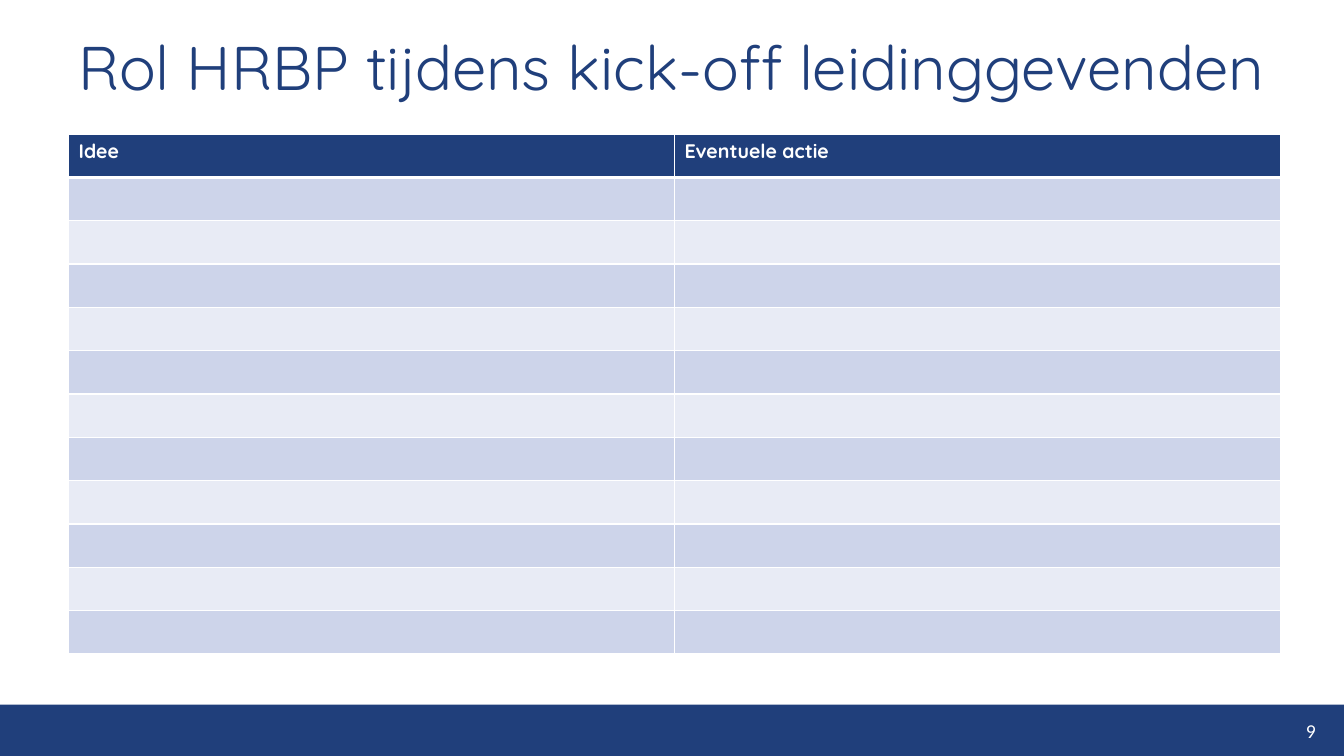
from lxml.etree import SubElement
from pptx import Presentation
from pptx.dml.color import RGBColor
from pptx.enum.shapes import MSO_SHAPE
from pptx.enum.text import MSO_ANCHOR, PP_ALIGN
from pptx.oxml.ns import qn
from pptx.util import Inches, Pt

NAVY, WHITE = "203F7B", "FFFFFF"
BANDS = ("CDD4EA", "E8EBF5")


def color(value):
    return RGBColor.from_string(value)


class SlideBuilder:
    """Holds the text style and the slide being built."""

    def __init__(self, page, font):
        self.page = page
        self.font = font

    def add_span(self, para, text, size, tint, bold=False, font=None):
        span = para.add_run()
        span.text = text
        span.font.name = font or self.font
        span.font.size = Pt(size)
        span.font.bold = bold
        span.font.color.rgb = color(tint)

    def bar(self, left, top, width, height, tint):
        box = self.page.shapes.add_shape(
            MSO_SHAPE.RECTANGLE, *map(Inches, (left, top, width, height)))
        box.shadow.inherit = False
        box.fill.solid()
        box.fill.fore_color.rgb = color(tint)
        box.line.fill.background()

    def text(self, place, text, size, tint, align, anchor=MSO_ANCHOR.TOP,
             insets=(0.1, 0.05), spacing=None, font=None):
        box = self.page.shapes.add_textbox(*map(Inches, place))
        frame = box.text_frame
        frame.word_wrap = True
        frame.vertical_anchor = anchor
        frame.margin_left = frame.margin_right = Inches(insets[0])
        frame.margin_top = frame.margin_bottom = Inches(insets[1])
        para = frame.paragraphs[0]
        para.alignment = align
        para.line_spacing = spacing
        self.add_span(para, text, size, tint, font=font)

    def border(self, cell, side, width):
        properties = cell._tc.get_or_add_tcPr()
        line = SubElement(properties, qn(f"a:ln{side}"), w=str(Pt(width)))
        fill = SubElement(line, qn("a:solidFill"))
        SubElement(fill, qn("a:srgbClr"), val=WHITE)

    def table(self, left, top, column_width, row_height, headings, row_count):
        """Add a heading row followed by empty banded rows."""
        column_count = len(headings)
        table = self.page.shapes.add_table(
            row_count, column_count, Inches(left), Inches(top),
            Inches(column_width * column_count),
            Inches(row_height * row_count)).table
        for column in table.columns:
            column.width = Inches(column_width)
        for index, row in enumerate(table.rows):
            row.height = Inches(row_height)
            for cell, heading in zip(row.cells, headings):
                # Borders precede the fill in the cell's XML.
                for side in "LRTB":
                    thick = (index, side) in ((0, "B"), (1, "T"))
                    self.border(cell, side, 3 if thick else 1)
                cell.fill.solid()
                tint = BANDS[(index - 1) % 2] if index else NAVY
                cell.fill.fore_color.rgb = color(tint)
                if index == 0:
                    para = cell.text_frame.paragraphs[0]
                    self.add_span(para, heading, 14, WHITE, bold=True)


def main():
    deck = Presentation()
    deck.slide_width, deck.slide_height = Inches(13.33), Inches(7.5)
    page = deck.slides.add_slide(deck.slide_layouts[6])
    builder = SlideBuilder(page, "Quicksand")
    builder.bar(0, 6.99, 13.33, 0.51, NAVY)
    builder.text((10.82, 7.1, 2.33, 0.3), "9", 14, WHITE, PP_ALIGN.RIGHT,
                 anchor=MSO_ANCHOR.MIDDLE, font="Calibri")
    builder.text((0.26, 0.3, 12.81, 0.78),
                 "Rol HRBP tijdens kick-off leidinggevenden", 44, NAVY,
                 PP_ALIGN.CENTER, insets=(0.13, 0.07), spacing=0.9)
    builder.table(0.68, 1.33, 6.01, 0.43, ("Idee", "Eventuele actie"), 12)
    deck.save("out.pptx")


if __name__ == "__main__":
    main()
